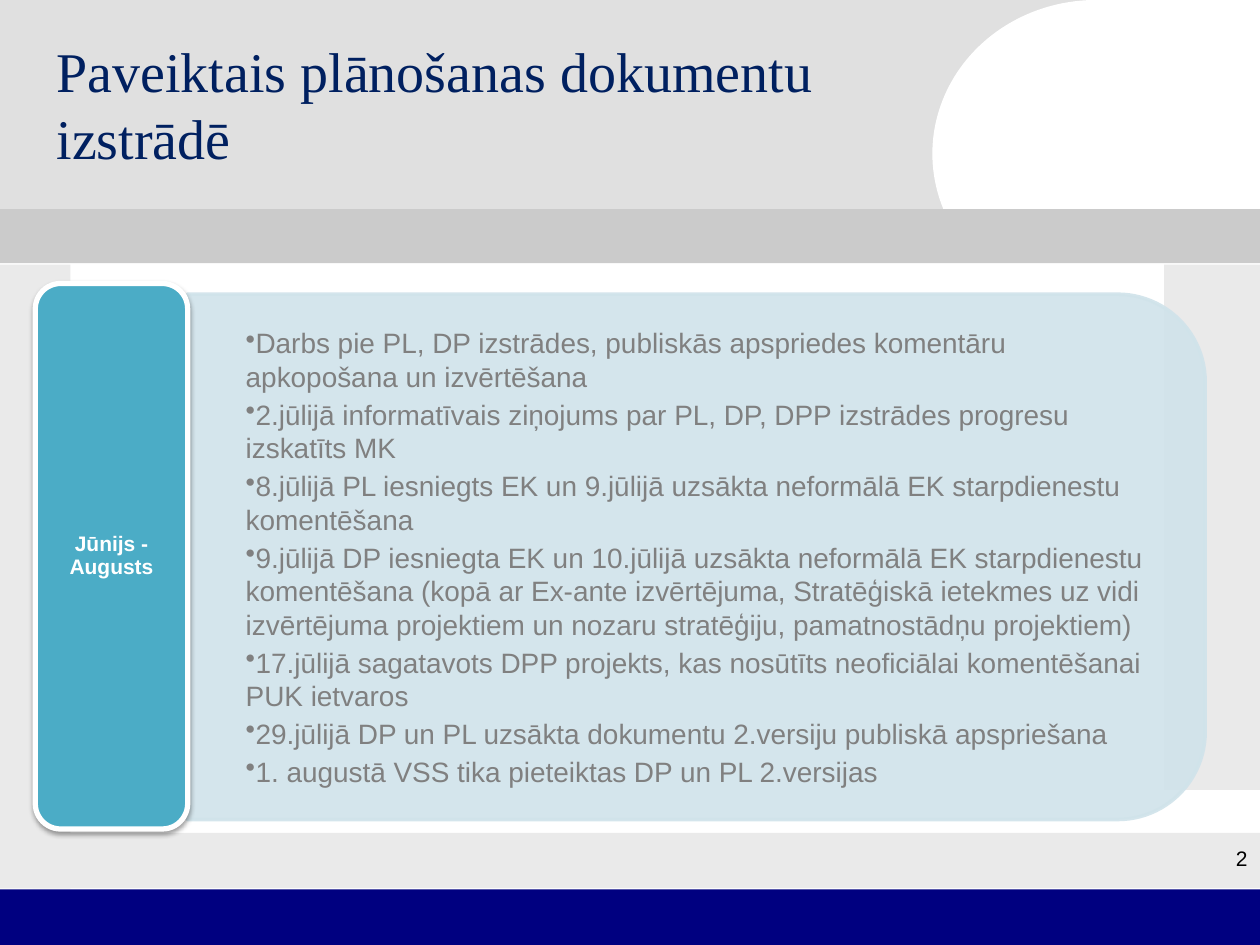
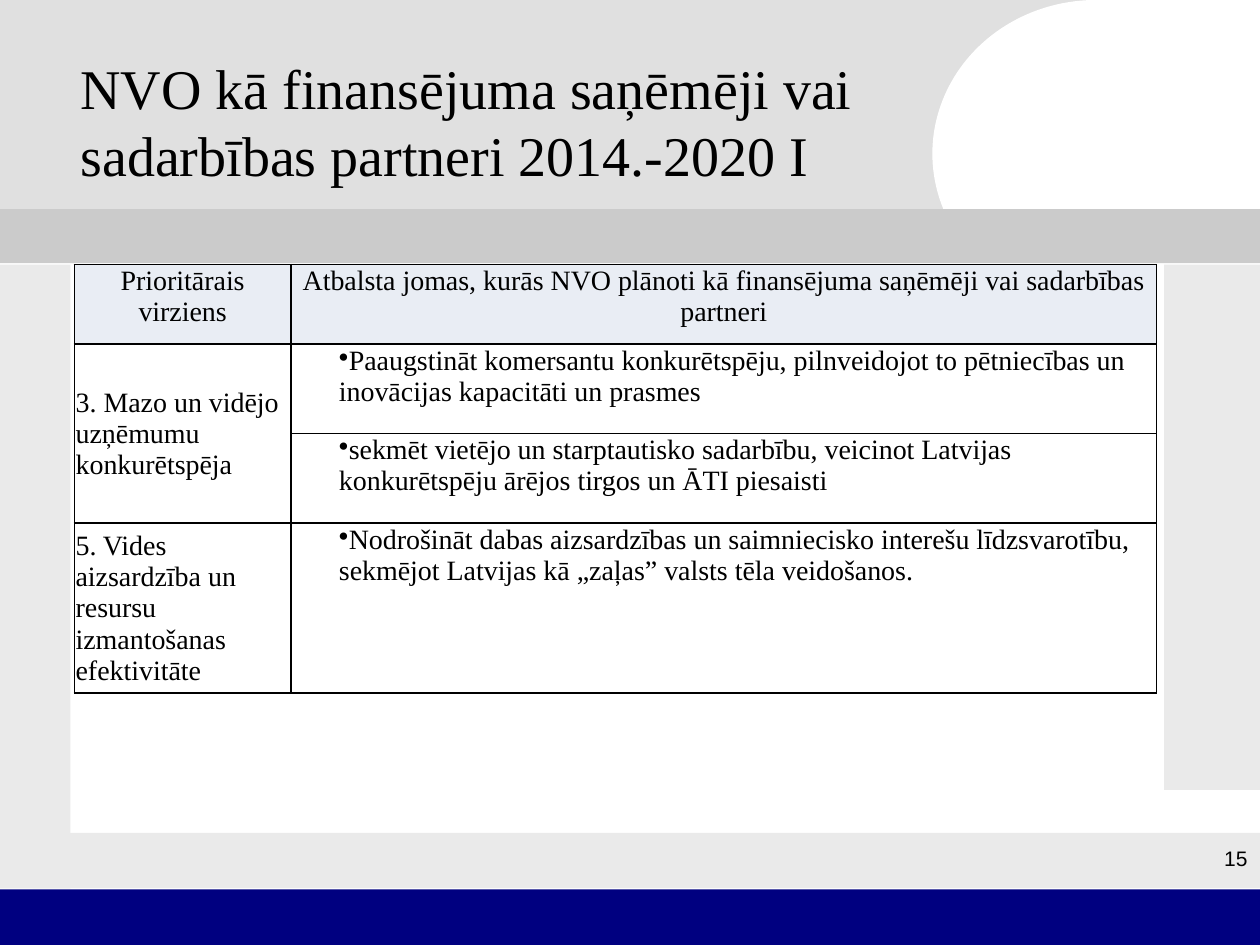
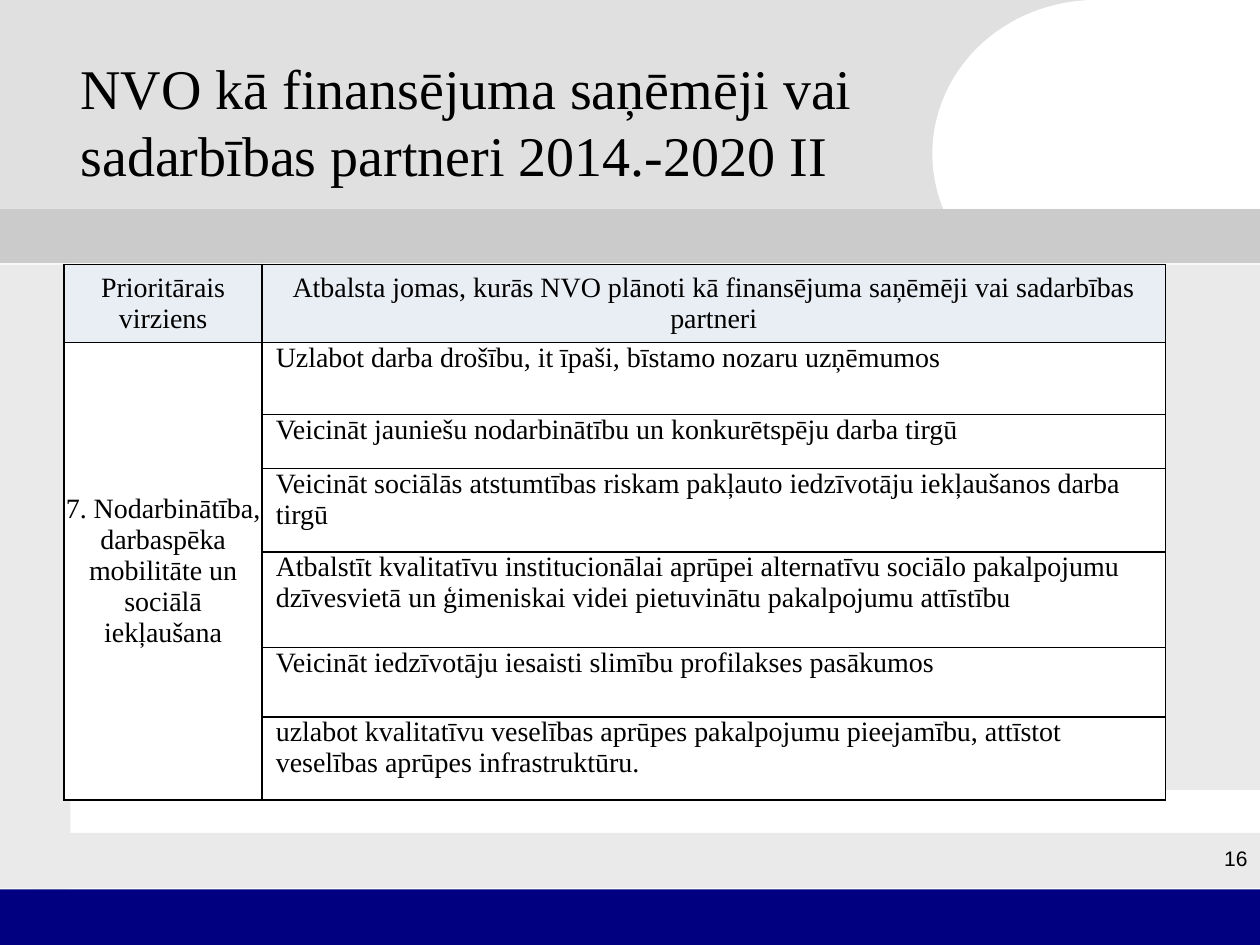
from lxml.etree import SubElement
from pptx import Presentation
from pptx.dml.color import RGBColor
from pptx.enum.shapes import MSO_SHAPE
from pptx.enum.text import MSO_ANCHOR, PP_ALIGN
from pptx.oxml.ns import qn
from pptx.util import Inches, Pt

COLORS = {
    "header": "E0E0E0",
    "band": "CBCBCB",
    "frame": "EAEAEA",
    "footer": "000080",
    "white": "FFFFFF",
    "black": "000000",
    "title": "002060",
    "panel": "D0E3EA",
    "label": "4BACC6",
    "body": "808080",
    "table_header": "E9EDF4",
}
SERIF = "Times New Roman"
SANS = "Arial"

BACKDROP = [
    (MSO_SHAPE.RECTANGLE, 0, 0, 9.09, 1.69, "header"),
    (MSO_SHAPE.OVAL, 7.4, 0, 2.6, 2.44, "white"),
    (MSO_SHAPE.RECTANGLE, 0, 2.1, 0.56, 4.95, "frame"),
    (MSO_SHAPE.RECTANGLE, 0.26, 6.61, 9.74, 0.44, "frame"),
    (MSO_SHAPE.RECTANGLE, 0, 7.06, 10, 0.44, "footer"),
    (MSO_SHAPE.RECTANGLE, 9.24, 2.1, 0.76, 4.17, "frame"),
    (MSO_SHAPE.RECTANGLE, 8.62, 0, 1.38, 2.02, "white"),
    (MSO_SHAPE.RECTANGLE, 0, 1.66, 10, 0.43, "band"),
]

TIMELINE_ITEMS = [
    "Darbs pie PL, DP izstrādes, publiskās apspriedes komentāru apkopošana un izvērtēšana",
    "2.jūlijā informatīvais ziņojums par PL, DP, DPP izstrādes progresu izskatīts MK",
    "8.jūlijā PL iesniegts EK un 9.jūlijā uzsākta neformālā EK starpdienestu komentēšana",
    "9.jūlijā DP iesniegta EK un 10.jūlijā uzsākta neformālā EK starpdienestu komentēšana "
    "(kopā ar Ex-ante izvērtējuma, Stratēģiskā ietekmes uz vidi izvērtējuma projektiem un "
    "nozaru stratēģiju, pamatnostādņu projektiem)",
    "17.jūlijā sagatavots DPP projekts, kas nosūtīts neoficiālai komentēšanai PUK ietvaros",
    "29.jūlijā DP un PL uzsākta dokumentu 2.versiju publiskā apspriešana",
    "1. augustā VSS tika pieteiktas DP un PL 2.versijas",
]

TABLE_TITLE = "NVO kā finansējuma saņēmēji vai sadarbības partneri 2014.-2020 "
TABLE_HEADER = [
    "Prioritārais virziens",
    "Atbalsta jomas, kurās NVO plānoti kā finansējuma saņēmēji vai sadarbības partneri",
]
BUSINESS_GROUPS = [
    ("3. Mazo un vidējo uzņēmumu konkurētspēja", [
        "Paaugstināt komersantu konkurētspēju, pilnveidojot to pētniecības un inovācijas "
        "kapacitāti un prasmes",
        "sekmēt vietējo un starptautisko sadarbību, veicinot Latvijas konkurētspēju ārējos "
        "tirgos un ĀTI piesaisti",
    ]),
    ("5. Vides aizsardzība un resursu izmantošanas efektivitāte", [
        "Nodrošināt dabas aizsardzības un saimniecisko interešu līdzsvarotību, sekmējot "
        "Latvijas kā „zaļas” valsts tēla veidošanos.",
    ]),
]
EMPLOYMENT_GROUPS = [
    ("7. Nodarbinātība, darbaspēka mobilitāte un sociālā iekļaušana", [
        "Uzlabot darba drošību, it īpaši, bīstamo nozaru uzņēmumos",
        "Veicināt jauniešu nodarbinātību un konkurētspēju darba tirgū",
        "Veicināt sociālās atstumtības riskam pakļauto iedzīvotāju iekļaušanos darba tirgū",
        "Atbalstīt kvalitatīvu institucionālai aprūpei alternatīvu sociālo pakalpojumu "
        "dzīvesvietā un ģimeniskai videi pietuvinātu pakalpojumu attīstību",
        "Veicināt iedzīvotāju iesaisti slimību profilakses pasākumos",
        "uzlabot kvalitatīvu veselības aprūpes pakalpojumu pieejamību, attīstot veselības "
        "aprūpes infrastruktūru.",
    ]),
]


def color(name):
    return RGBColor.from_string(COLORS[name])


def write_text(frame, text, size=16, font=SERIF, ink="black", bold=False,
               align=PP_ALIGN.LEFT, bullet=False, indent=0, space_after=0, line_spacing=None):
    lines = [text] if isinstance(text, str) else text
    for index, line in enumerate(lines):
        paragraph = frame.paragraphs[0] if index == 0 else frame.add_paragraph()
        if bullet:
            properties = paragraph._p.get_or_add_pPr()
            properties.set("marL", str(Inches(indent)))
            properties.set("indent", "0")
            SubElement(properties, qn("a:buChar"), char="•")
        paragraph.alignment = align
        paragraph.space_after = Pt(space_after)
        if line_spacing:
            paragraph.line_spacing = line_spacing
        run = paragraph.add_run()
        run.text = line
        run.font.size = Pt(size)
        run.font.name = font
        run.font.bold = bold
        run.font.color.rgb = color(ink)


def add_text(slide, box, text, anchor=MSO_ANCHOR.MIDDLE, insets=(0.1, 0.05), **text_format):
    frame = slide.shapes.add_textbox(*map(Inches, box)).text_frame
    frame.word_wrap = True
    frame.vertical_anchor = anchor
    frame.margin_left = frame.margin_right = Inches(insets[0])
    frame.margin_top = frame.margin_bottom = Inches(insets[1])
    write_text(frame, text, **text_format)


def add_block(slide, kind, box, fill, line=None, line_width=1):
    shape = slide.shapes.add_shape(kind, *map(Inches, box))
    shape.shadow.inherit = False
    shape.fill.solid()
    shape.fill.fore_color.rgb = color(fill)
    if line:
        shape.line.color.rgb = color(line)
        shape.line.width = Pt(line_width)
    else:
        shape.line.fill.background()
    return shape


def set_opacity(shape, percent):
    for element in shape._element.spPr.iter(qn("a:srgbClr")):
        SubElement(element, qn("a:alpha"), val=str(percent * 1000))


def add_drop_shadow(shape):
    effects = shape._element.spPr.find(qn("a:effectLst"))
    shadow = SubElement(effects, qn("a:outerShdw"), blurRad=str(Pt(3.1)), dist=str(Pt(1.6)),
                        dir="5400000", rotWithShape="0")
    tint = SubElement(shadow, qn("a:srgbClr"), val=COLORS["black"])
    SubElement(tint, qn("a:alpha"), val="38000")


def add_base_slide(presentation, title, number, title_box=(0.54, 0.33, 7.4, 1.25),
                   title_ink="black"):
    slide = presentation.slides.add_slide(presentation.slide_layouts[6])
    for kind, left, top, width, height, fill in BACKDROP:
        add_block(slide, kind, (left, top, width, height), fill)
    add_text(slide, title_box, title, size=32, ink=title_ink)
    add_text(slide, (7.74, 6.66, 2.26, 0.5), str(number), anchor=MSO_ANCHOR.TOP,
             size=12, font=SANS, align=PP_ALIGN.RIGHT)
    return slide


def add_timeline(slide):
    panel = add_block(slide, MSO_SHAPE.ROUND_2_SAME_RECTANGLE, (3.44, 0.38, 4.17, 8.08),
                      "panel", line="panel", line_width=2)
    panel.rotation = 90
    set_opacity(panel, 90)
    add_text(slide, (1.49, 2.54, 7.87, 3.76), TIMELINE_ITEMS, insets=(0.27, 0.14), font=SANS,
             ink="body", bullet=True, indent=0.19, space_after=2.4)
    label = add_block(slide, MSO_SHAPE.ROUNDED_RECTANGLE, (0.28, 2.25, 1.21, 4.33),
                      "label", line="white", line_width=3)
    add_drop_shadow(label)
    add_text(slide, (0.34, 2.31, 1.09, 4.21), "Jūnijs - Augusts", insets=(0.05, 0.03), size=12,
             font=SANS, ink="white", bold=True, align=PP_ALIGN.CENTER, line_spacing=0.9)


def add_cell_borders(cell):
    properties = cell._tc.get_or_add_tcPr()
    for index, side in enumerate(("a:lnL", "a:lnR", "a:lnT", "a:lnB")):
        border = properties.makeelement(qn(side), {"w": str(Pt(1))})
        properties.insert(index, border)
        fill = SubElement(border, qn("a:solidFill"))
        SubElement(fill, qn("a:srgbClr"), val=COLORS["black"])


def fill_cell(cell, text, fill="white", anchor=MSO_ANCHOR.TOP, left=0, inset=0, **text_format):
    cell.fill.solid()
    cell.fill.fore_color.rgb = color(fill)
    cell.vertical_anchor = anchor
    cell.margin_left = Inches(left or inset)
    cell.margin_right = cell.margin_top = Inches(inset)
    cell.margin_bottom = 0
    write_text(cell.text_frame, text, **text_format)


def add_support_table(slide, left, widths, heights, groups, header_anchor, group_align,
                      item_left, inset=0, bullet=False):
    box = (left, 2.1, sum(widths), sum(heights))
    table = slide.shapes.add_table(len(heights), len(widths), *map(Inches, box)).table
    table.first_row = table.horz_banding = False
    for column, width in zip(table.columns, widths):
        column.width = Inches(width)
    for row, height in zip(table.rows, heights):
        row.height = Inches(height)
    for column, text in enumerate(TABLE_HEADER):
        fill_cell(table.cell(0, column), text, fill="table_header", anchor=header_anchor,
                  inset=inset, align=PP_ALIGN.CENTER)
    first = 1
    for name, items in groups:
        last = first + len(items) - 1
        if last > first:
            table.cell(first, 0).merge(table.cell(last, 0))
        fill_cell(table.cell(first, 0), name, anchor=MSO_ANCHOR.MIDDLE, inset=inset,
                  align=group_align)
        for row, item in enumerate(items, first):
            fill_cell(table.cell(row, 1), item, left=item_left, inset=inset, bullet=bullet)
        first = last + 1
    for cell in table.iter_cells():
        add_cell_borders(cell)


def main():
    presentation = Presentation()
    presentation.slide_width = Inches(10)
    presentation.slide_height = Inches(7.5)

    slide = add_base_slide(presentation, "Paveiktais plānošanas dokumentu izstrādē", 2,
                           title_box=(0.35, 0, 7.01, 1.65), title_ink="title")
    add_timeline(slide)

    slide = add_base_slide(presentation, TABLE_TITLE + "I", 15)
    add_support_table(slide, 0.59, [1.72, 6.87], [0.63, 0.71, 0.71, 1.35], BUSINESS_GROUPS,
                      MSO_ANCHOR.TOP, PP_ALIGN.LEFT, item_left=0.38, inset=0.01, bullet=True)

    slide = add_base_slide(presentation, TABLE_TITLE + "II", 16)
    add_support_table(slide, 0.51, [1.57, 7.17], [0.62, 0.57, 0.43, 0.66, 0.76, 0.55, 0.66],
                      EMPLOYMENT_GROUPS, MSO_ANCHOR.MIDDLE, PP_ALIGN.CENTER, item_left=0.11)

    presentation.save("out.pptx")


if __name__ == "__main__":
    main()
